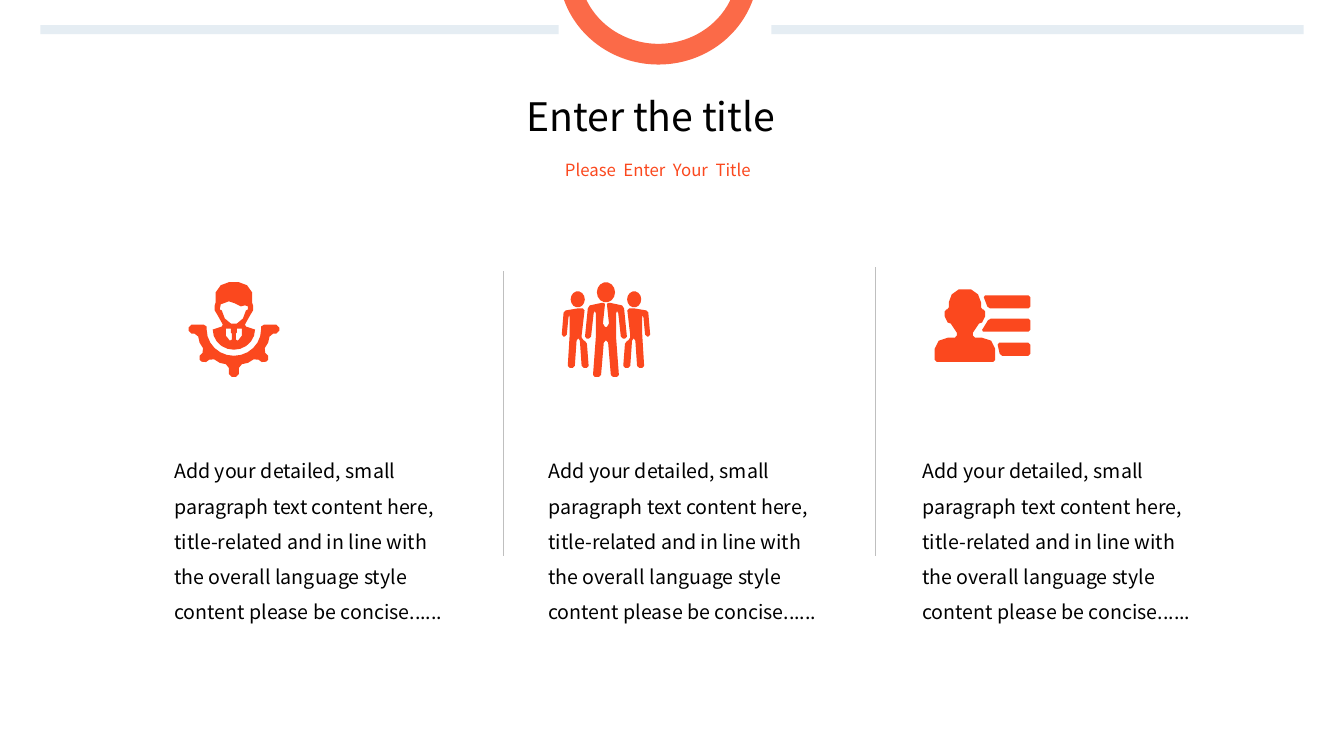
from math import cos, dist, pi, sin
from lxml.etree import SubElement
from pptx import Presentation
from pptx.dml.color import RGBColor
from pptx.enum.shapes import MSO_CONNECTOR as LINK, MSO_SHAPE as KIND
from pptx.enum.text import MSO_ANCHOR as ANCHOR, MSO_AUTO_SIZE as AUTO, PP_ALIGN as ALIGN
from pptx.oxml.ns import qn
from pptx.util import Inches, Pt

ORANGE = RGBColor(0xFB, 0x48, 0x1E)
MIST = RGBColor(0xCF, 0xDE, 0xE8)
GREY = RGBColor(0xBF, 0xBF, 0xBF)
BLACK = RGBColor(0, 0, 0)
FONT = "Noto Sans CJK SC"
BODY = ("Add your detailed, small paragraph text content here, title-related "
        "and in line with the overall language style content please be concise......")


def paint(shape, color, alpha=None):
    shape.shadow.inherit = False
    shape.line.fill.background()
    shape.fill.solid()
    shape.fill.fore_color.rgb = color
    if alpha:
        tone = shape._element.spPr.find(qn("a:solidFill"))[0]
        SubElement(tone, qn("a:alpha")).set("val", str(alpha * 1000))


def add_deco(slide, kind, box, color, alpha):
    shape = slide.shapes.add_shape(kind, *map(Inches, box))
    paint(shape, color, alpha)
    return shape


def write(shape, text, size, color, align, space=1.0):
    frame = shape.text_frame
    frame.word_wrap = True
    frame.auto_size = AUTO.SHAPE_TO_FIT_TEXT
    frame.vertical_anchor = ANCHOR.TOP
    para = frame.paragraphs[0]
    para.alignment = align
    para.line_spacing = space
    run = para.add_run()
    run.text = text
    run.font.size = Pt(size)
    run.font.name = FONT
    run.font.color.rgb = color


def add_text(slide, box, *style):
    write(slide.shapes.add_textbox(*map(Inches, box)), *style)


def set_title(slide, box, *style):
    title = slide.shapes.title
    title.left, title.top, title.width, title.height = map(Inches, box)
    write(title, *style)


def add_rule(slide, x, top, end):
    rule = slide.shapes.add_connector(
        LINK.STRAIGHT, Inches(x), Inches(top), Inches(x), Inches(end))
    rule.line.color.rgb = GREY
    rule.line.width = Pt(0.25)
    SubElement(rule._element.spPr, qn("a:effectLst"))


def flip(points):
    return [(-x, y) for x, y in reversed(points)]


def both(half):
    skip = 1 if half[0][0] < 0.001 else 0
    stop = -1 if half[-1][0] < 0.001 else None
    return half + flip(half[skip:stop])


def arc(y, rx, ry, start, end, steps):
    turns = [start + (end - start) * i / steps for i in range(steps + 1)]
    return [(rx * cos(t), y + ry * sin(t)) for t in turns]


def oval(x, y, rx, ry):
    return [(x + dx, dy) for dx, dy in arc(y, rx, ry, 0, 2 * pi, 14)[:-1]]


def toward(spot, goal, reach):
    part = min(reach / dist(spot, goal), 0.4)
    return [a + (b - a) * part for a, b in zip(spot, goal)]


def trim(points, reach):
    out = []
    for i, spot in enumerate(points):
        last, after = points[i - 1], points[(i + 1) % len(points)]
        dot = sum((b - a) * (c - b) for a, b, c in zip(last, spot, after))
        if reach and dot < 0.7 * dist(last, spot) * dist(spot, after):
            out += [toward(spot, last, reach), toward(spot, after, reach)]
        else:
            out.append(spot)
    return out


def add_icon(slide, axis, parts):
    pen = None
    for points, reach in parts:
        spots = [(Inches(axis + x), Inches(y)) for x, y in trim(points, reach)]
        if pen is None:
            pen = slide.shapes.build_freeform(*spots[0])
        else:
            pen.move_to(*spots[0])
        pen.add_line_segments(spots[1:], close=True)
    paint(pen.convert_to_shape(), ORANGE)


def helm_parts():
    wheel = arc(3.27, 0.27, 0.26, pi / 2, 0, 6) + [
        (0.27, 3.22), (0.45, 3.22), (0.45, 3.31), (0.36, 3.31), (0.34, 3.4),
        (0.29, 3.48), (0.36, 3.55), (0.3, 3.61), (0.22, 3.55), (0.14, 3.6),
        (0.05, 3.62), (0.05, 3.74)]
    bust = [(0.05, 2.8), (0.13, 2.83), (0.18, 2.9), (0.18, 3), (0.19, 3.03),
            (0.19, 3.08), (0.16, 3.13), (0.11, 3.22), (0.12, 3.24)]
    bust += arc(3.27, 0.21, 0.2, 0, pi / 2, 5)
    face = [(-0.05, 2.99), (-0.13, 3.02), (-0.14, 3.07), (-0.12, 3.08),
            (-0.09, 3.16), (-0.03, 3.21), (0.03, 3.21), (0.09, 3.16),
            (0.12, 3.08), (0.14, 3.07), (0.14, 3.04), (0.11, 3.03),
            (0.07, 3.04), (0.01, 3.01)]
    shirt = [(0.03, 3.26), (0.08, 3.26), (0.08, 3.33), (0.04, 3.38),
             (0.02, 3.37), (0.02, 3.31), (0.03, 3.3)]
    return [(both(wheel), 0.03), (both(bust), 0), (face, 0),
            (shirt, 0), (flip(shirt), 0)]


def team_parts():
    chief = [(0, 3.26), (0.03, 3.21), (0.01, 3.02), (0.02, 3), (0.16, 3.03),
             (0.18, 3.06), (0.21, 3.36), (0.15, 3.36), (0.12, 3.09), (0.1, 3.09),
             (0.1, 3.34), (0.13, 3.74), (0.05, 3.74), (0.02, 3.38)]
    aide = [(0.21, 3.06), (0.28, 3.06), (0.4, 3.08), (0.42, 3.1), (0.44, 3.34),
            (0.39, 3.34), (0.37, 3.13), (0.36, 3.13), (0.36, 3.32), (0.38, 3.65),
            (0.31, 3.65), (0.29, 3.36), (0.26, 3.36), (0.24, 3.65), (0.17, 3.65),
            (0.19, 3.39), (0.24, 3.37), (0.24, 3.32)]
    heads = [oval(0, 2.9, 0.09, 0.1)]
    heads += [oval(x, 2.97, 0.07, 0.08) for x in (-0.28, 0.28)]
    men = [both(chief), aide, flip(aide)]
    return [(man, 0.02) for man in men] + [(head, 0) for head in heads]


def list_parts():
    bust = [(0.06, 2.87), (0.13, 2.92), (0.16, 3), (0.16, 3.07), (0.2, 3.07),
            (0.2, 3.14), (0.17, 3.2), (0.14, 3.21), (0.08, 3.3), (0.08, 3.35),
            (0.17, 3.35), (0.26, 3.38), (0.3, 3.46), (0.3, 3.59)]
    parts = [(both(bust), 0.02)]
    for top, upper, lower in ((2.93, 0.18, 0.23), (3.16, 0.24, 0.16), (3.4, 0.32, 0.35)):
        bar = [(upper, top), (0.65, top), (0.65, top + 0.13), (lower, top + 0.13)]
        parts.append((bar, 0.02))
    return parts


def main():
    deck = Presentation()
    deck.slide_width, deck.slide_height = Inches(13.33), Inches(7.5)
    slide = deck.slides.add_slide(deck.slide_layouts[5])
    ring = add_deco(slide, KIND.DONUT, (5.54, -1.26, 1.98, 1.9), ORANGE, 81)
    ring.adjustments[0] = 0.108
    for left, width in ((0.4, 5.14), (7.65, 5.28)):
        add_deco(slide, KIND.RECTANGLE, (left, 0.25, width, 0.09), MIST, 52)
    set_title(slide, (5.05, 0.87, 2.81, 0.57), "Enter the title", 28, BLACK, ALIGN.CENTER)
    add_text(slide, (4.84, 1.54, 3.37, 0.3), "Please  Enter  Your  Title",
             12, ORANGE, ALIGN.CENTER)
    add_icon(slide, 2.32, helm_parts())
    add_icon(slide, 6.01, team_parts())
    add_icon(slide, 9.57, list_parts())
    add_rule(slide, 4.99, 2.69, 5.52)
    add_rule(slide, 8.68, 2.65, 5.52)
    for col in range(3):
        add_text(slide, (1.63 + 3.71 * col, 4.39, 2.99, 1.16),
                 BODY, 14, BLACK, ALIGN.LEFT, 1.5)
    deck.save("out.pptx")


if __name__ == "__main__":
    main()
